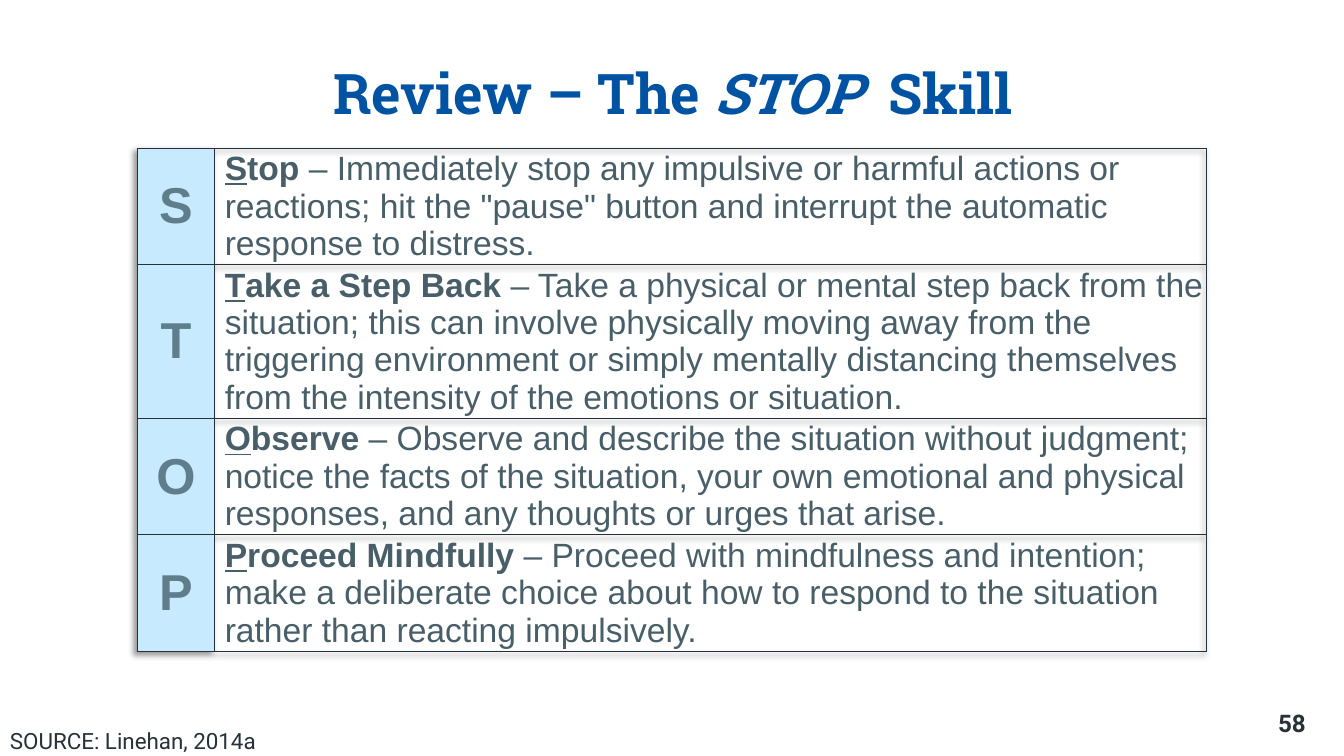
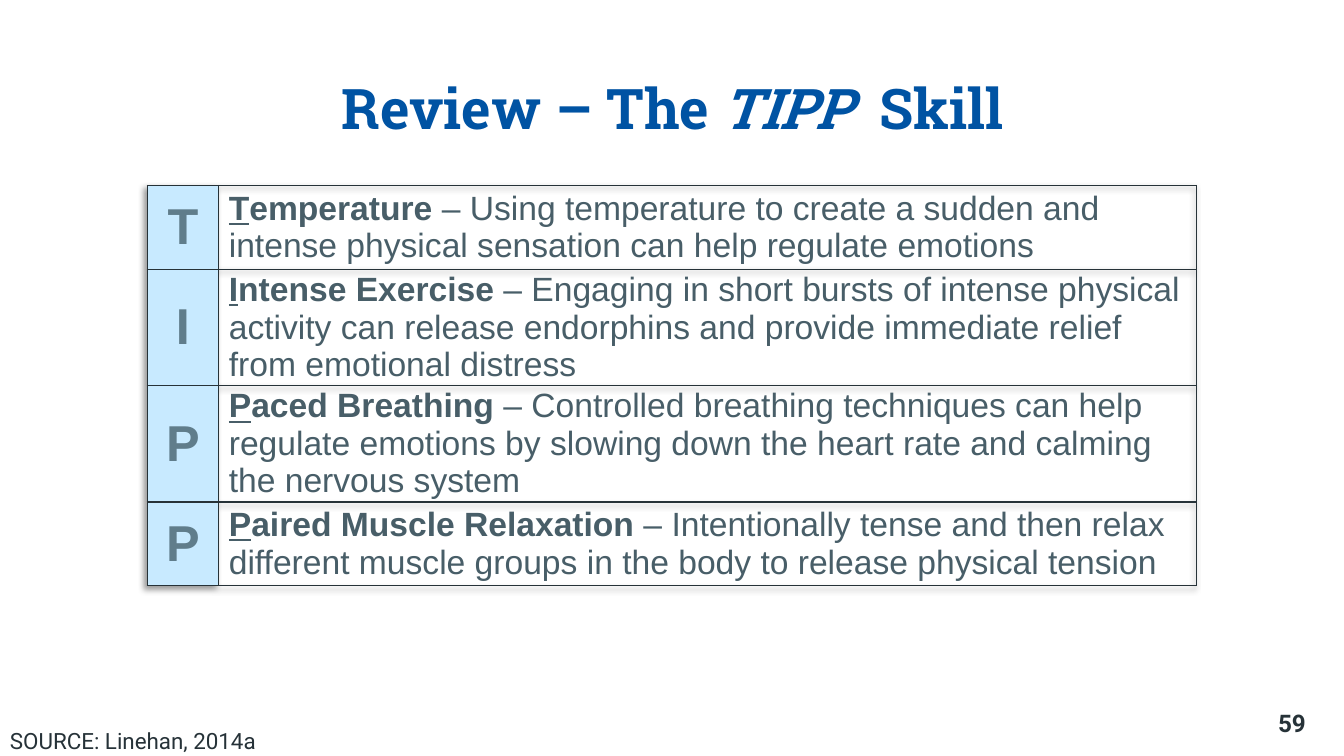
from pptx import Presentation
from pptx.dml.color import RGBColor
from pptx.enum.text import MSO_ANCHOR, PP_ALIGN
from pptx.oxml import parse_xml
from pptx.oxml.ns import nsdecls
from pptx.util import Pt

PX = 9144  # EMU per px, 100 px to the inch
MIDDLE = MSO_ANCHOR.MIDDLE
LEFT, CENTER, RIGHT = PP_ALIGN.LEFT, PP_ALIGN.CENTER, PP_ALIGN.RIGHT

BLUE = RGBColor(0x00, 0x53, 0xA3)
INK = RGBColor(0x26, 0x32, 0x38)
SLATE = RGBColor(0x48, 0x5E, 0x68)
STEEL = RGBColor(0x60, 0x7D, 0x8B)
PALE_BLUE = RGBColor(0xC8, 0xEA, 0xFF)
TITLE_FONT, BODY_FONT, FOOTER_FONT = "Roboto Slab", "Arial", "Roboto"

NS = nsdecls("a")
SHADOW = (f'<a:effectLst {NS}><a:outerShdw blurRad="50800" dist="38100" dir="8100000" '
          'algn="tr" rotWithShape="0"><a:srgbClr val="000000"><a:alpha val="40000"/>'
          '</a:srgbClr></a:outerShdw></a:effectLst>')
OUTLINE = (f'<a:ln {NS} w="6604"><a:solidFill><a:srgbClr val="{BLUE}"/>'
           '</a:solidFill></a:ln>')

FIRST_NUMBER = 58
SOURCE = "SOURCE: Linehan, 2014a"
SKILLS = [
    dict(name="STOP", title=(115, 40, 1104, 102), corner=(136, 147),
         cols=(77, 984), heights=(115, 152, 115, 115), rows=[
        ("Stop", "Immediately stop any impulsive or harmful actions or reactions; hit the "
         "\"pause\" button and interrupt the automatic response to distress."),
        ("Take a Step Back", "Take a physical or mental step back from the situation; this can "
         "involve physically moving away from the triggering environment or simply mentally "
         "distancing themselves from the intensity of the emotions or situation."),
        ("Observe", "Observe and describe the situation without judgment; notice the facts of "
         "the situation, your own emotional and physical responses, and any thoughts or urges "
         "that arise."),
        ("Proceed Mindfully", "Proceed with mindfulness and intention; make a deliberate choice "
         "about how to respond to the situation rather than reacting impulsively."),
    ]),
    dict(name="TIPP", title=(115, 45, 1104, 123), corner=(146, 184),
         cols=(71, 970), heights=(83, 115, 115, 83), rows=[
        ("Temperature", "Using temperature to create a sudden and intense physical sensation "
         "can help regulate emotions"),
        ("Intense Exercise", "Engaging in short bursts of intense physical activity can release "
         "endorphins and provide immediate relief from emotional distress"),
        ("Paced Breathing", "Controlled breathing techniques can help regulate emotions by "
         "slowing down the heart rate and calming the nervous system"),
        ("Paired Muscle Relaxation", "Intentionally tense and then relax different muscle groups "
         "in the body to release physical tension"),
    ]),
]


def write(p, texts, font, size, color, align=LEFT, bold=True):
    """Fill a paragraph with equally styled runs and return the runs."""
    p.alignment = align
    runs = []
    for text in texts:
        r = p.add_run()
        r.text = text
        r.font.name, r.font.size, r.font.bold = font, Pt(size), bold
        r.font.color.rgb = color
        runs.append(r)
    return runs


def format_cell(cell, margins):
    """Set the margins, middle anchor and thin dark borders of a cell."""
    cell.vertical_anchor = MIDDLE
    cell.margin_left, cell.margin_top, cell.margin_right, cell.margin_bottom = (
        m * PX for m in margins)
    for i, side in enumerate(("lnL", "lnR", "lnT", "lnB")):
        cell._tc.get_or_add_tcPr().insert(i, parse_xml(
            f'<a:{side} {NS} w="12700"><a:solidFill><a:srgbClr val="{INK}"/>'
            f'</a:solidFill></a:{side}>'))


prs = Presentation()
prs.slide_width, prs.slide_height = 1333 * PX, 750 * PX

for number, skill in enumerate(SKILLS, FIRST_NUMBER):
    s = prs.slides.add_slide(prs.slide_layouts[5])

    title = s.shapes.title
    title.left, title.top, title.width, title.height = (v * PX for v in skill["title"])
    tf = title.text_frame
    tf.vertical_anchor = MIDDLE
    tf.margin_left = tf.margin_top = tf.margin_right = tf.margin_bottom = 10 * PX
    runs = write(tf.paragraphs[0], ("Review – The ", skill["name"] + " ", " Skill"),
                 TITLE_FONT, 40, BLUE, CENTER)
    runs[1].font.italic = True

    left, top = skill["corner"]
    table = s.shapes.add_table(len(skill["rows"]), 2, left * PX, top * PX,
                               sum(skill["cols"]) * PX, sum(skill["heights"]) * PX).table
    table.first_row = table.horz_banding = False
    table._tbl.tblPr.insert(0, parse_xml(SHADOW))
    for column, width in zip(table.columns, skill["cols"]):
        column.width = width * PX

    for row, height, (term, meaning) in zip(table.rows, skill["heights"], skill["rows"]):
        row.height = height * PX
        letter, description = row.cells

        letter.fill.solid()
        letter.fill.fore_color.rgb = PALE_BLUE
        format_cell(letter, (5, 3, 5, 3))
        r = write(letter.text_frame.paragraphs[0], (term[0],), BODY_FONT, 36, STEEL, CENTER)[0]
        r.font._element.insert(0, parse_xml(OUTLINE))

        description.fill.background()
        format_cell(description, (10, 2, 0, 2))
        runs = write(description.text_frame.paragraphs[0],
                     (term[0], term[1:] + " ", "– " + meaning), BODY_FONT, 24, SLATE)
        runs[0].font.underline = True
        runs[2].font.bold = False

    tf = s.shapes.add_textbox(0, 716 * PX, 319 * PX, 37 * PX).text_frame
    tf.word_wrap = True
    write(tf.paragraphs[0], (SOURCE,), FOOTER_FONT, 16, INK, bold=False)

    tf = s.shapes.add_textbox(1225 * PX, 693 * PX, 80 * PX, 57 * PX).text_frame
    tf.word_wrap = True
    tf.margin_left = tf.margin_top = tf.margin_right = tf.margin_bottom = 10 * PX
    write(tf.paragraphs[0], (str(number),), FOOTER_FONT, 17.3, INK, RIGHT)

prs.save("out.pptx")
